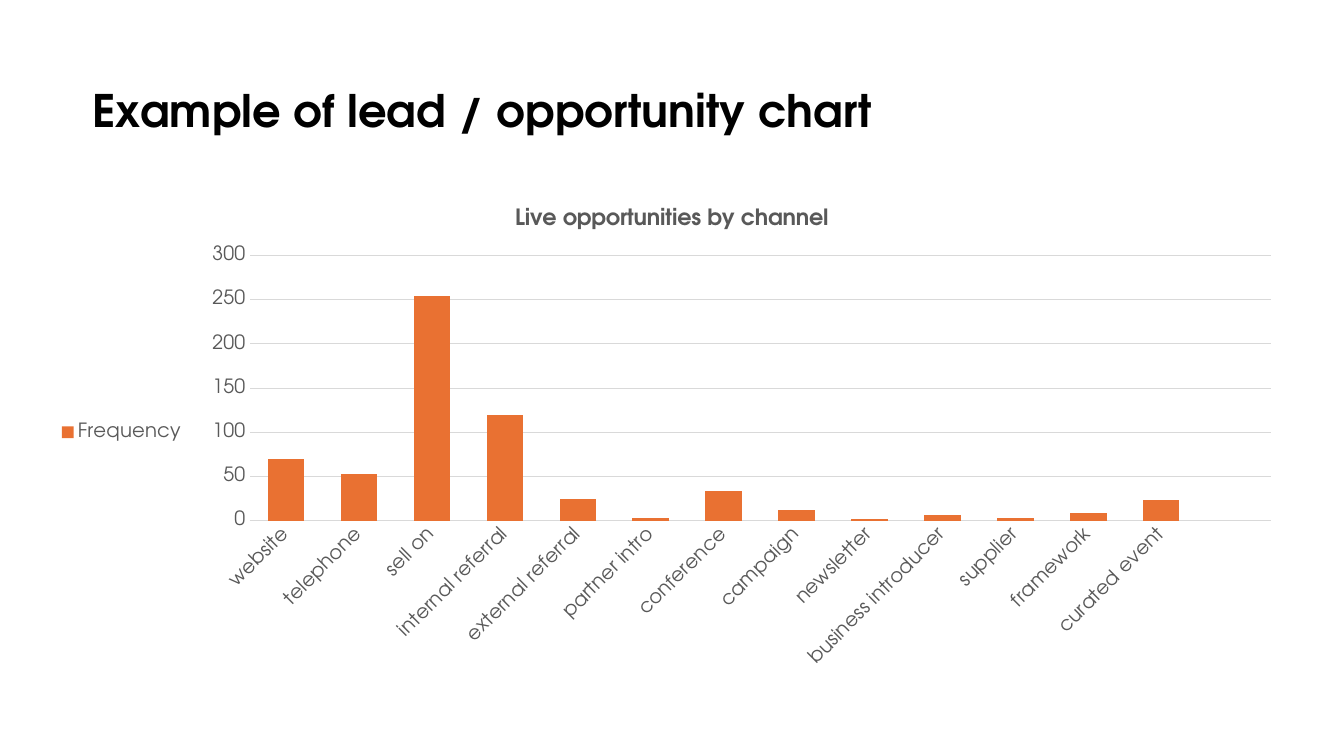
from lxml import etree
from pptx import Presentation
from pptx import util as u
from pptx.chart import data as chart_data
from pptx.dml.color import RGBColor
from pptx.enum import chart as chart_enum, text
from pptx.oxml import ns

COLORS = {"ink": "000000", "label": "595959", "rule": "D9D9D9", "bar": "E97132"}
CHANNELS = {
    "website": 70, "telephone": 53, "sell on": 254, "internal referral": 120,
    "external referral": 24, "partner intro": 3, "conference": 34, "campaign": 12,
    "newsletter": 2, "business introducer": 6, "supplier": 3, "framework": 9,
    "curated event": 23, "": None,
}


class SlideBuilder:
    """Hold the style and current slide, and place elements by shares of its size."""

    font_name = "TeX Gyre Adventor"

    def __init__(self, deck):
        self.width, self.height = deck.slide_width, deck.slide_height
        self.page = deck.slides.add_slide(deck.slide_layouts[6])

    def area(self, left, top, width, height):
        return (round(left * self.width), round(top * self.height),
                round(width * self.width), round(height * self.height))

    def style(self, font, size, color, bold=False):
        font.name, font.size, font.bold = self.font_name, u.Pt(size), bold
        font.color.rgb = RGBColor.from_string(COLORS[color])

    def rule(self, line):
        line.width = u.Pt(0.75)
        line.color.rgb = RGBColor.from_string(COLORS["rule"])

    def heading(self, words, *shares):
        box = self.page.shapes.add_textbox(*self.area(*shares))
        frame = box.text_frame
        frame.word_wrap = True
        frame.vertical_anchor = text.MSO_ANCHOR.MIDDLE
        frame.margin_left = 0
        para = frame.paragraphs[0]
        para.text, para.line_spacing = words, 0.9
        self.style(para.font, 32, "ink", True)

    def column_chart(self, title, series_name, values, plot_shares, *shares):
        data = chart_data.CategoryChartData()
        data.categories = list(values)
        data.add_series(series_name, list(values.values()))
        chart = self.page.shapes.add_chart(
            chart_enum.XL_CHART_TYPE.COLUMN_CLUSTERED, *self.area(*shares), data).chart
        self.style(chart.font, 14, "label")
        chart.has_title = True
        para = chart.chart_title.text_frame.paragraphs[0]
        para.text = title
        self.style(para.font, 16, "label", True)
        chart.has_legend = True
        chart.legend.position = chart_enum.XL_LEGEND_POSITION.LEFT
        chart.legend.include_in_layout = False
        self.style(chart.legend.font, 14, "label")
        plot = chart.plots[0]
        plot.gap_width, plot.vary_by_categories = 100, False
        fill = plot.series[0].format.fill
        fill.solid()
        fill.fore_color.rgb = RGBColor.from_string(COLORS["bar"])
        for axis in (chart.category_axis, chart.value_axis):
            axis.major_tick_mark = axis.minor_tick_mark = chart_enum.XL_TICK_MARK.NONE
            self.style(axis.tick_labels.font, 14, "label")
        self.rule(chart.category_axis.format.line)
        self.rule(chart.value_axis.major_gridlines.format.line)
        chart.value_axis.format.line.fill.background()
        chart.value_axis.minimum_scale, chart.value_axis.maximum_scale = 0, 300
        chart.value_axis.major_unit = 50
        self.slant_labels(chart.category_axis)
        self.fix_plot(chart, plot_shares)

    def slant_labels(self, axis, degrees=-45):
        body = axis.tick_labels.font and axis._element.find(
            f"{ns.qn('c:txPr')}/{ns.qn('a:bodyPr')}")
        body.set("rot", str(degrees * 60000))
        body.set("vert", "horz")

    def fix_plot(self, chart, plot_shares):
        plot_area = chart.element.find(f".//{ns.qn('c:plotArea')}")
        for old in plot_area.findall(ns.qn("c:layout")):
            plot_area.remove(old)
        layout = etree.Element(ns.qn("c:layout"))
        plot_area.insert(0, layout)
        manual = etree.SubElement(layout, ns.qn("c:manualLayout"))
        settings = [("layoutTarget", "inner"), ("xMode", "edge"), ("yMode", "edge"),
                    *zip("xywh", plot_shares)]
        for tag, value in settings:
            etree.SubElement(manual, ns.qn(f"c:{tag}"), val=str(value))


def main():
    deck = Presentation()
    deck.slide_width, deck.slide_height = u.Inches(13.33), u.Inches(7.5)
    builder = SlideBuilder(deck)
    builder.column_chart("Live opportunities by channel", "Frequency", CHANNELS,
                         (0.162, 0.14, 0.817, 0.54), 0.035, 0.247, 0.93, 0.65)
    builder.heading("Example of lead / opportunity chart", 0.069, 0.053, 0.863, 0.193)
    deck.save("out.pptx")


if __name__ == "__main__":
    main()
